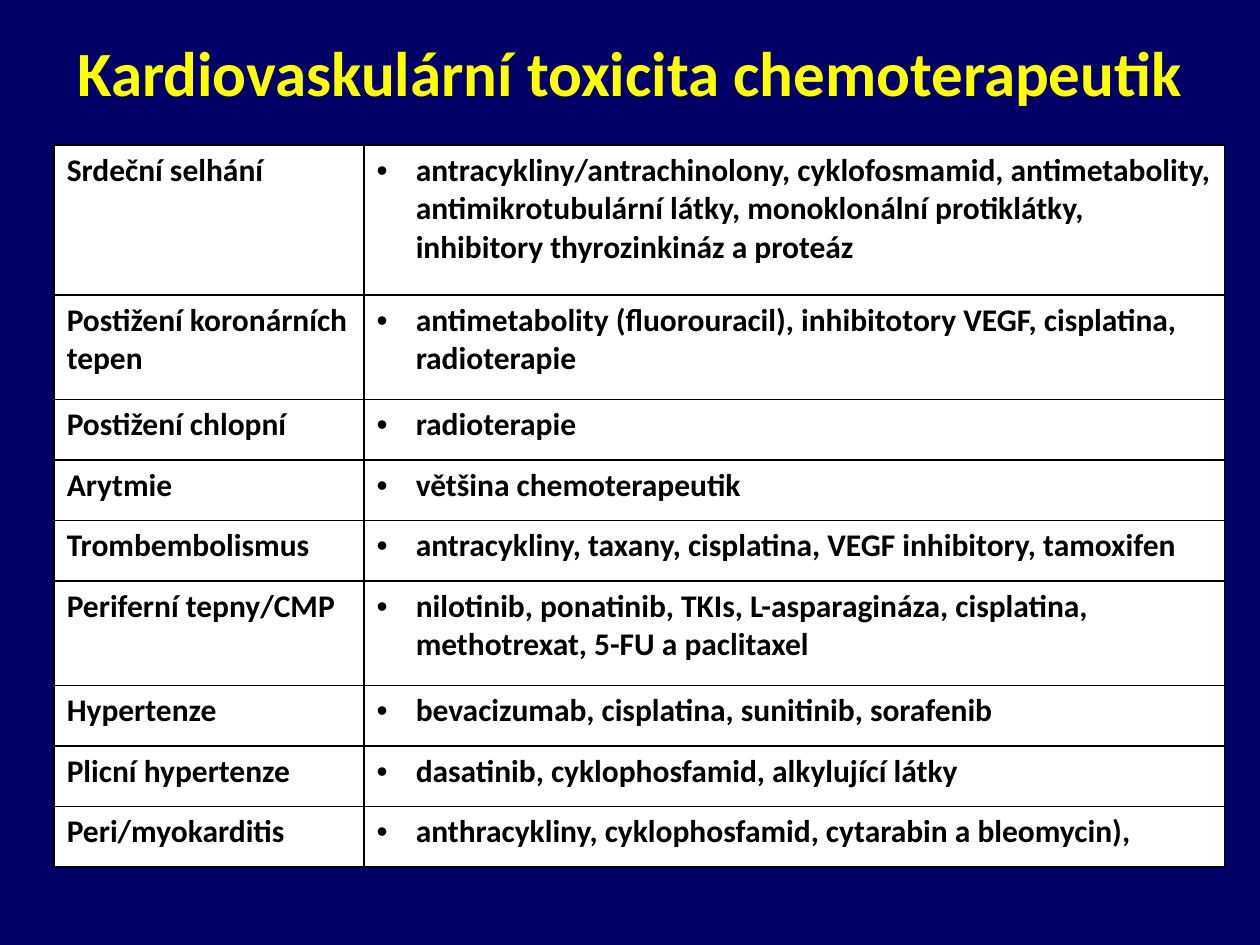
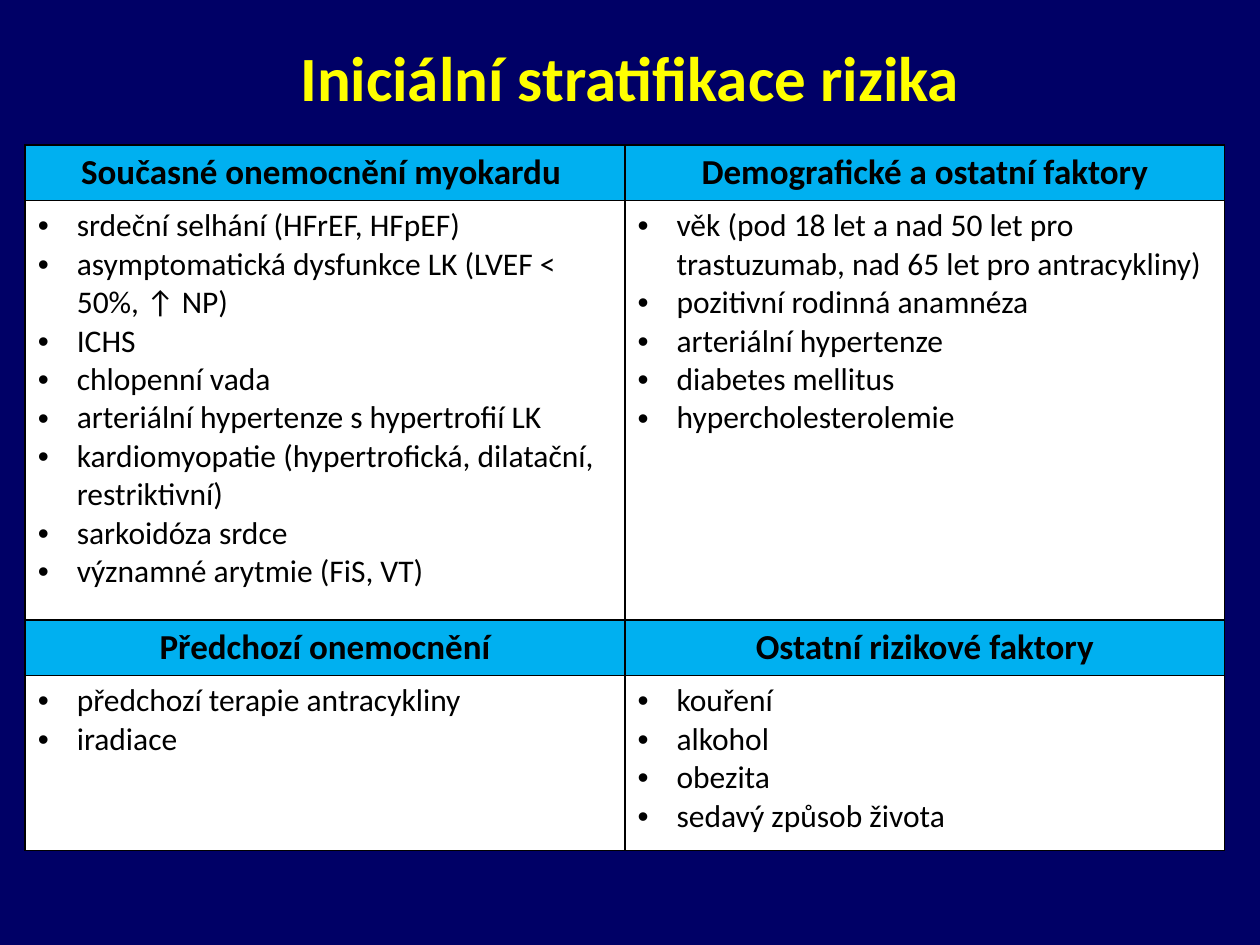
import pptx
import pptx.util
import pptx.dml.color
import pptx.enum.text
import pptx.oxml
import pptx.oxml.ns

Inches, Pt = pptx.util.Inches, pptx.util.Pt
RGB = pptx.dml.color.RGBColor
ALIGN = pptx.enum.text.PP_ALIGN
qn = pptx.oxml.ns.qn

NAVY = RGB(0x00, 0x00, 0x66)
YELLOW = RGB(0xFF, 0xFF, 0x00)
SKY = RGB(0x00, 0xB0, 0xF0)
WHITE = RGB(0xFF, 0xFF, 0xFF)
BLACK = RGB(0x00, 0x00, 0x00)
FONT = "Calibri"
TOP = 1.15
HANG = 0.31

TOXIC = [
    ("Srdeční selhání",
     "antracykliny/antrachinolony, cyklofosmamid, antimetabolity, "
     "antimikrotubulární látky, monoklonální protiklátky, "
     "inhibitory thyrozinkináz a proteáz"),
    ("Postižení koronárních tepen",
     "antimetabolity (fluorouracil), inhibitotory VEGF, cisplatina, radioterapie"),
    ("Postižení chlopní", "radioterapie"),
    ("Arytmie", "většina chemoterapeutik"),
    ("Trombembolismus",
     "antracykliny, taxany, cisplatina, VEGF inhibitory, tamoxifen"),
    ("Periferní tepny/CMP",
     "nilotinib, ponatinib, TKIs, L-asparagináza, cisplatina, "
     "methotrexat, 5-FU a paclitaxel"),
    ("Hypertenze", "bevacizumab, cisplatina, sunitinib, sorafenib"),
    ("Plicní hypertenze", "dasatinib, cyklophosfamid, alkylující látky"),
    ("Peri/myokarditis", "anthracykliny, cyklophosfamid, cytarabin a bleomycin),"),
]
LINES = [3, 2, 1, 1, 1, 2, 1, 1, 1]
HEIGHTS = {1: 0.48, 2: 0.83, 3: 1.19}

RISKS = [
    [("Současné onemocnění myokardu ",
      ["srdeční selhání (HFrEF, HFpEF)",
       "asymptomatická dysfunkce LK (LVEF < 50%, ↑ NP)",
       "ICHS",
       "chlopenní vada",
       "arteriální hypertenze s hypertrofií LK",
       "kardiomyopatie (hypertrofická, dilatační, restriktivní)",
       "sarkoidóza srdce",
       "významné arytmie (FiS, VT)"]),
     ("Demografické a ostatní faktory",
      ["věk (pod 18 let a nad 50 let pro trastuzumab, nad 65 let pro antracykliny)",
       "pozitivní rodinná anamnéza",
       "arteriální hypertenze",
       "diabetes mellitus",
       "hypercholesterolemie"])],
    [("Předchozí onemocnění",
      ["předchozí terapie antracykliny", "iradiace"]),
     ("Ostatní rizikové faktory",
      ["kouření", "alkohol", "obezita", "sedavý způsob života"])],
]
HEAD = 0.44
BODIES = [3.33, 1.39]


def write(frame, texts, size=18, bold=False, color=BLACK, align=ALIGN.LEFT,
          bullet=False, before=0):
    """Fill a text frame with one paragraph per text."""
    for i, text in enumerate(texts):
        para = frame.add_paragraph() if i else frame.paragraphs[0]
        para.alignment = align
        para.space_before = Pt(before)
        run = para.add_run()
        run.text = text
        font = run.font
        font.name, font.size, font.bold = FONT, Pt(size), bold
        font.color.rgb = color
        if bullet:
            props = para._p.get_or_add_pPr()
            props.set("marL", str(Inches(HANG)))
            props.set("indent", str(-Inches(HANG)))
            mark = pptx.oxml.parse_xml(
                f'<a:buFont {pptx.oxml.ns.nsdecls("a")} typeface="Arial"/>')
            props.append(mark)
            props.append(props.makeelement(qn("a:buChar"), {"char": "•"}))


def border(cell):
    props = cell._tc.get_or_add_tcPr()
    for side in ("lnL", "lnR", "lnT", "lnB"):
        props.append(pptx.oxml.parse_xml(
            f'<a:{side} {pptx.oxml.ns.nsdecls("a")} w="{Pt(1)}"><a:solidFill>'
            f'<a:srgbClr val="{BLACK}"/></a:solidFill></a:{side}>'))


def new_slide(deck, title, top, height, before=0):
    slide = deck.slides.add_slide(deck.slide_layouts[5])
    box = slide.shapes.title
    box.left, box.top = Inches(0.5), Inches(top)
    box.width, box.height = Inches(9), Inches(height)
    frame = box.text_frame
    frame.auto_size = pptx.enum.text.MSO_AUTO_SIZE.NONE
    frame.vertical_anchor = pptx.enum.text.MSO_ANCHOR.MIDDLE
    frame.margin_left = frame.margin_right = 0
    frame.margin_top = frame.margin_bottom = 0
    write(frame, [title], size=36, bold=True, color=YELLOW,
          align=ALIGN.CENTER, before=before)
    return slide


def add_grid(slide, left, cols, rows, cells):
    """Draw a table; each cell is (texts, fill, text format)."""
    table = slide.shapes.add_table(
        len(rows), len(cols), Inches(left), Inches(TOP),
        Inches(sum(cols)), Inches(sum(rows))).table
    table.first_row = table.horz_banding = False
    for col, width in zip(table.columns, cols):
        col.width = Inches(width)
    for row, height, line in zip(table.rows, rows, cells):
        row.height = Inches(height)
        for cell, (texts, fill, style) in zip(row.cells, line):
            border(cell)
            cell.fill.solid()
            cell.fill.fore_color.rgb = fill
            write(cell.text_frame, texts, **style)


def main():
    deck = pptx.Presentation()
    deck.slide_width, deck.slide_height = Inches(10), Inches(7.5)
    back = deck.slide_master.background.fill
    back.solid()
    back.fore_color.rgb = NAVY

    slide = new_slide(deck, "Kardiovaskulární toxicita chemoterapeutik", 0.13, 0.87)
    cells = [[([name], WHITE, dict(bold=True)),
              ([drugs], WHITE, dict(bold=True, bullet=True))]
             for name, drugs in TOXIC]
    add_grid(slide, 0.43, [2.46, 6.83], [HEIGHTS[n] for n in LINES], cells)

    slide = new_slide(deck, "Iniciální stratifikace rizika", 0.3, 0.61, before=3)
    cells, rows = [], []
    for group, body in zip(RISKS, BODIES):
        cells.append([([head], SKY, dict(size=20, bold=True, align=ALIGN.CENTER))
                      for head, _ in group])
        cells.append([(items, WHITE, dict(bullet=True)) for _, items in group])
        rows += [HEAD, body]
    add_grid(slide, 0.2, [4.76, 4.76], rows, cells)

    deck.save("out.pptx")


if __name__ == "__main__":
    main()
